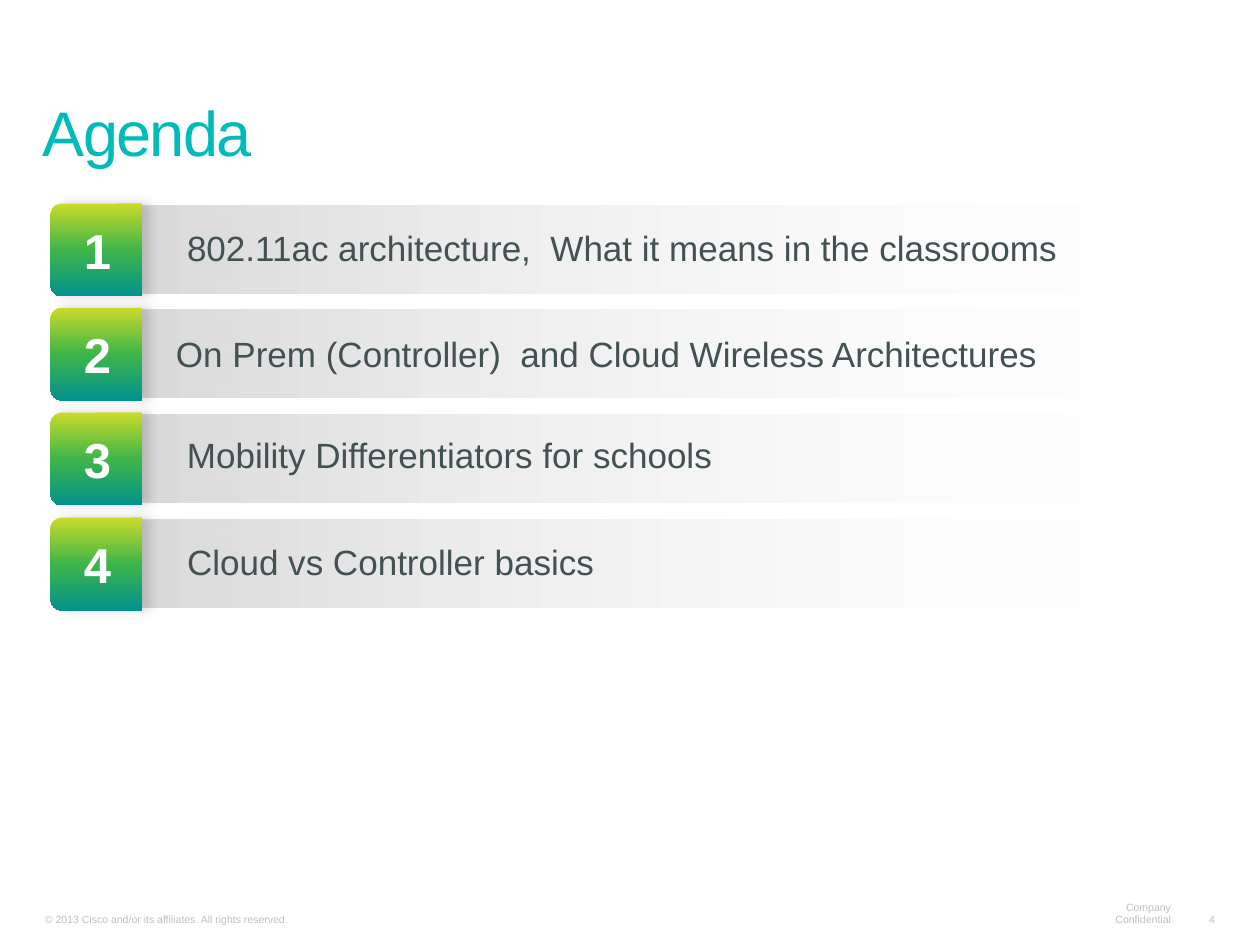
from dataclasses import dataclass

from lxml.etree import SubElement
from pptx import Presentation
from pptx.dml.color import RGBColor
from pptx.enum.shapes import MSO_SHAPE as Preset
from pptx.enum.text import MSO_ANCHOR as Anchor, PP_ALIGN as Align
from pptx.oxml.ns import qn
from pptx.util import Emu, Pt

PX_PER_INCH = 126
FONT = "Arial"
TEAL, SLATE, SILVER, WHITE = "01BBBB", "435153", "C0C0C0", "FFFFFF"


@dataclass(frozen=True)
class Box:
    left: int
    top: int
    width: int
    height: int


@dataclass(frozen=True)
class TextStyle:
    size: int
    color: str
    bold: bool = False
    align: Align = Align.LEFT
    anchor: Anchor = Anchor.MIDDLE
    wrap: bool = False
    line_spacing: float = 1.0
    inset_x: int = 13
    inset_y: int = 6


@dataclass(frozen=True)
class Stop:
    percent: int
    color: str
    opacity: int = 100


@dataclass(frozen=True)
class AgendaItem:
    text: str
    box: Box


BAR_STOPS = [Stop(0, "D9D9D9"), Stop(100, WHITE, 0)]
TILE_STOPS = [Stop(0, "CBDB2A"), Stop(50, "3EB549"), Stop(100, "02928C")]

TITLE = TextStyle(36, TEAL, anchor=Anchor.BOTTOM, wrap=True, line_spacing=0.8, inset_x=11)
NUMBER = TextStyle(28, WHITE, bold=True, align=Align.CENTER)
LABEL = TextStyle(20, SLATE, line_spacing=0.95)
COPYRIGHT = TextStyle(6, SILVER, anchor=Anchor.BOTTOM, wrap=True, inset_x=11, inset_y=5)
FOOTER = TextStyle(6, SILVER, align=Align.RIGHT, anchor=Anchor.BOTTOM, inset_x=11, inset_y=5)

AGENDA = [
    AgendaItem("802.11ac architecture,  What it means in the classrooms", Box(174, 223, 901, 53)),
    AgendaItem("On Prem (Controller)  and Cloud Wireless Architectures", Box(163, 329, 893, 53)),
    AgendaItem("Mobility Differentiators for schools", Box(174, 430, 554, 53)),
    AgendaItem("Cloud vs Controller basics", Box(174, 537, 436, 53)),
]


def px(length: int) -> Emu:
    return Emu(round(length * 914400 / PX_PER_INCH))


def place(box: Box) -> tuple:
    return px(box.left), px(box.top), px(box.width), px(box.height)


def rgb(color: str) -> RGBColor:
    return RGBColor.from_string(color)


def add_color(parent, color: str, opacity: int) -> None:
    node = SubElement(parent, qn("a:srgbClr"), val=str(rgb(color)))
    if opacity < 100:
        SubElement(node, qn("a:alpha"), val=str(opacity * 1000))


def add_text(page, box: Box, text: str, style: TextStyle):
    frame = page.shapes.add_textbox(*place(box)).text_frame
    frame.word_wrap = style.wrap
    frame.vertical_anchor = style.anchor
    frame.margin_left = frame.margin_right = px(style.inset_x)
    frame.margin_top = frame.margin_bottom = px(style.inset_y)
    para = frame.paragraphs[0]
    span = para.add_run()
    span.text = text
    para.alignment = style.align
    para.line_spacing = style.line_spacing
    para.font.name = FONT
    para.font.size = Pt(style.size)
    para.font.bold = style.bold
    para.font.color.rgb = rgb(style.color)
    return span


def add_gradient_shape(page, preset: Preset, box: Box, stops: list[Stop], angle: int):
    shape = page.shapes.add_shape(preset, *place(box))
    shape.shadow.inherit = False
    shape.line.fill.background()
    shape.fill.gradient()
    shape.fill.gradient_angle = angle
    stop_list = shape._element.spPr.find(".//" + qn("a:gsLst"))
    stop_list.clear()
    for stop in stops:
        node = SubElement(stop_list, qn("a:gs"), pos=str(stop.percent * 1000))
        add_color(node, stop.color, stop.opacity)
    return shape


def add_tile(page, box: Box) -> None:
    """Draw a tile rounded on its left side, with a soft shadow to the right."""
    tile = add_gradient_shape(page, Preset.ROUND_2_SAME_RECTANGLE, box, TILE_STOPS, 180)
    tile.rotation = 270
    tile.adjustments[0] = 0.13
    tile.adjustments[1] = 0
    effects = tile._element.spPr.find(qn("a:effectLst"))
    shadow = SubElement(effects, qn("a:outerShdw"), blurRad=str(Pt(6)),
                        dist=str(Pt(4)), dir="0", rotWithShape="0")
    add_color(shadow, "000000", 15)


def add_agenda(page) -> None:
    offsets = [row * 314 // 3 for row in range(len(AGENDA))]
    for offset in offsets:
        add_gradient_shape(page, Preset.RECTANGLE, Box(120, 206 + offset, 1140, 88), BAR_STOPS, 0)
        add_tile(page, Box(50, 204 + offset, 93, 92))
    for number, (offset, item) in enumerate(zip(offsets, AGENDA), start=1):
        add_text(page, Box(71, 214 + offset, 53, 72), str(number), NUMBER)
        add_text(page, item.box, item.text, LABEL)


def main() -> None:
    deck = Presentation()
    deck.slide_width, deck.slide_height = px(1260), px(945)
    page = deck.slides.add_slide(deck.slide_layouts[6])

    add_text(page, Box(34, 907, 471, 24),
             "© 2013 Cisco and/or its affiliates. All rights reserved.", COPYRIGHT)
    add_text(page, Box(1074, 907, 108, 24), "Company Confidential", FOOTER)
    add_text(page, Box(1191, 907, 35, 24), "4", FOOTER)

    title = add_text(page, Box(32, 59, 1183, 116), "Agenda", TITLE)
    title.font._element.set("spc", "-100")
    add_agenda(page)
    deck.save("out.pptx")


if __name__ == "__main__":
    main()
